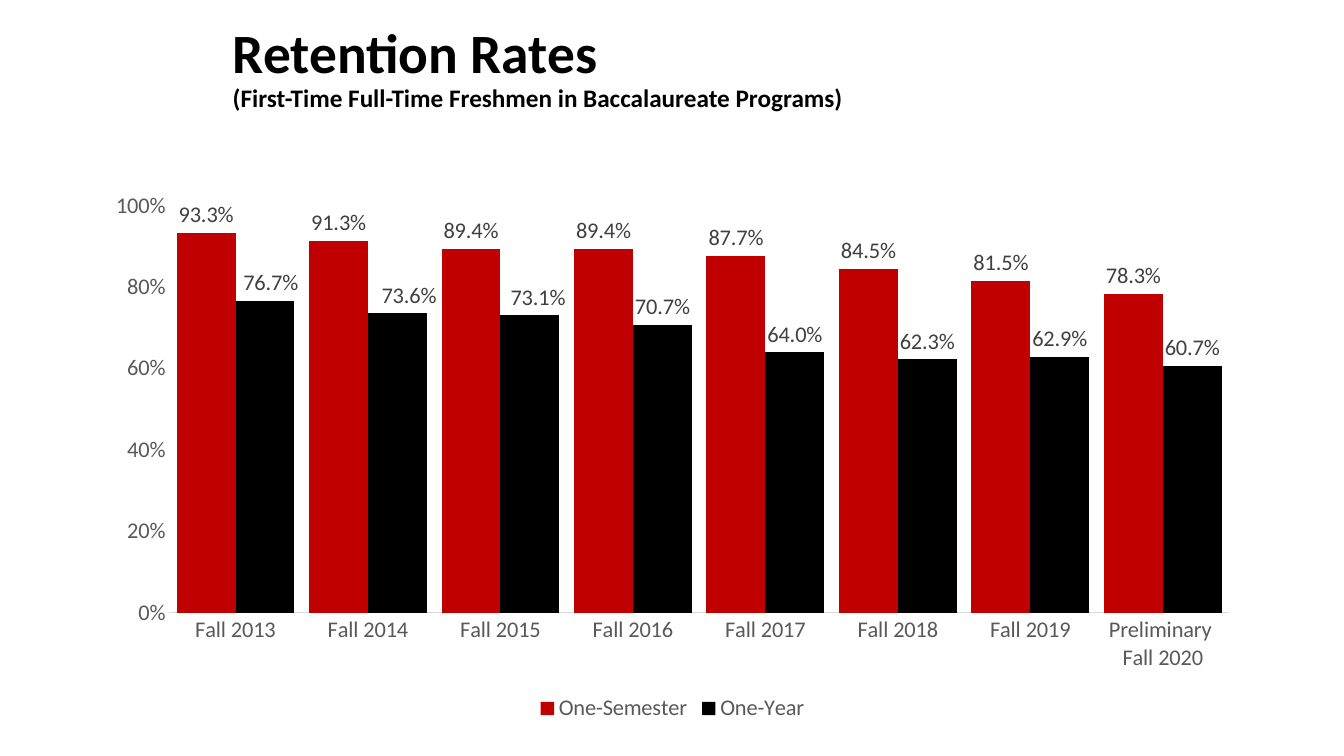
from lxml import etree
from pptx import Presentation
from pptx.chart.data import CategoryChartData
from pptx.dml.color import RGBColor
from pptx.enum import chart as ch, text
from pptx.oxml import parse_xml
from pptx.oxml.ns import nsdecls
from pptx.util import Inches, Pt

FONT = "Calibri"
BLACK = RGBColor(0, 0, 0)
RED = RGBColor(0xC0, 0, 0)
AXIS_GREY = RGBColor(0x59, 0x59, 0x59)
LABEL_GREY = RGBColor(0x40, 0x40, 0x40)
LINE_GREY = RGBColor(0xD9, 0xD9, 0xD9)


def set_font(font, size=16, color=AXIS_GREY, bold=False):
    font.name, font.size, font.bold = FONT, Pt(size), bold
    font.color.rgb = color


def manual_layout(**settings):
    """Return a c:layout element, with its settings in schema order."""
    items = "".join(f'<c:{k} val="{v}"/>' for k, v in settings.items())
    return parse_xml(f'<c:layout {nsdecls("c")}><c:manualLayout>{items}'
                     '</c:manualLayout></c:layout>')


prs = Presentation()
prs.slide_width, prs.slide_height = Inches(13.33), Inches(7.5)
s = prs.slides.add_slide(prs.slide_layouts[6])

# Title
tf = s.shapes.add_textbox(Inches(2.21), Inches(0.29), Inches(10.26), Inches(0.8)).text_frame
tf.word_wrap = True
tf.vertical_anchor = text.MSO_ANCHOR.MIDDLE
p = tf.paragraphs[0]
p.line_spacing = 0.9
r = p.add_run()
r.text = "Retention Rates"
set_font(r.font, 39.6, BLACK, True)
p.add_line_break()
r = p.add_run()
r.text = "(First-Time Full-Time Freshmen in Baccalaureate Programs)"
set_font(r.font, 18, BLACK, True)

# Chart
data = CategoryChartData(number_format="0.0%")
data.categories = [f"Fall {year}" for year in range(2013, 2020)] + ["Preliminary \nFall 2020"]
data.add_series("One-Semester", [0.933, 0.913, 0.894, 0.894, 0.877, 0.845, 0.815, 0.783])
data.add_series("One-Year", [0.767, 0.736, 0.731, 0.707, 0.64, 0.623, 0.629, 0.607])
chart = s.shapes.add_chart(ch.XL_CHART_TYPE.COLUMN_CLUSTERED, Inches(0.92), Inches(1.81),
                           Inches(11.5), Inches(5.4), data).chart
set_font(chart.font, color=BLACK)
chart.has_title = False
chart.has_legend = True
chart.legend.position = ch.XL_LEGEND_POSITION.BOTTOM
chart.legend.include_in_layout = False
set_font(chart.legend.font)

rates = chart.value_axis
rates.minimum_scale, rates.maximum_scale, rates.major_unit = 0, 1, 0.2
rates.has_major_gridlines = False
rates.tick_labels.number_format = "0%"
rates.tick_labels.number_format_is_linked = False
rates.format.line.fill.background()
terms = chart.category_axis
terms.format.line.color.rgb = LINE_GREY
terms.format.line.width = Pt(0.75)
for axis in (rates, terms):
    axis.major_tick_mark = axis.minor_tick_mark = ch.XL_TICK_MARK.NONE
    set_font(axis.tick_labels.font)

plot = chart.plots[0]
plot.gap_width, plot.overlap = 25, 0
plot.vary_by_categories = False
for series, color in zip(plot.series, (RED, BLACK)):
    series.format.fill.solid()
    series.format.fill.fore_color.rgb = color
    labels = series.data_labels
    labels.show_value = True
    labels.number_format = "0.0%"
    labels.number_format_is_linked = False
    labels.position = ch.XL_LABEL_POSITION.OUTSIDE_END
    set_font(labels.font, color=LABEL_GREY)

# The first three one-year labels sit a little to the right, clear of the red bars
one_year = plot.series[1]
for i, shift in enumerate((0.005, 0.01, 0.007)):
    label = one_year.points[i].data_label
    set_font(label.font, color=LABEL_GREY)
    label.position = ch.XL_LABEL_POSITION.OUTSIDE_END
    dlbl = one_year.data_labels._element.xpath(f"c:dLbl[c:idx/@val={i}]")[0]
    dlbl.insert(1, manual_layout(x=shift, y=0))

plot_area = chart._chartSpace.chart.plotArea
for old in plot_area.xpath("c:layout"):
    plot_area.remove(old)
plot_area.insert(0, manual_layout(layoutTarget="inner", xMode="edge", yMode="edge",
                                  x=0.066, y=0.043, w=0.914, h=0.748))

prs.save("out.pptx")
